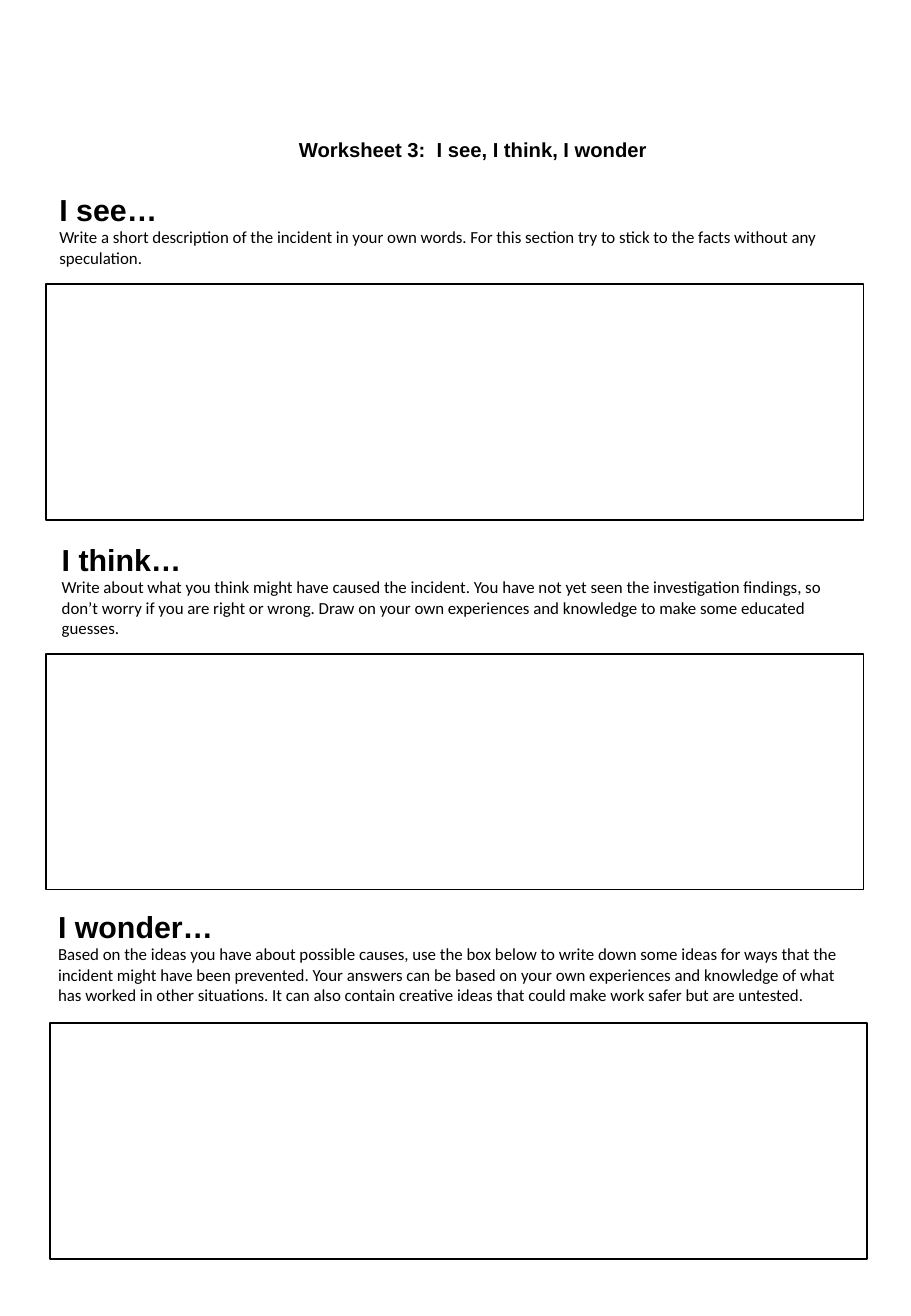
from pptx import Presentation
from pptx.dml.color import RGBColor
from pptx.enum.shapes import MSO_SHAPE
from pptx.enum.text import MSO_AUTO_SIZE, PP_ALIGN
from pptx.util import Inches, Pt

BLACK, WHITE = "000000", "FFFFFF"
WIDTH = 6.73
ANSWER_HEIGHT = 1.94

# heading, prompt, prompt (left, top, height), answer box (left, top)
SECTIONS = [
    ("I see…",
     "Write a short description of the incident in your own words. For this "
     "section try to stick to the facts without any speculation.",
     (0.39, 1.52, 0.74), (0.38, 2.34)),
    ("I think…",
     "Write about what you think might have caused the incident. You have not "
     "yet seen the investigation findings, so don’t worry if you are right or "
     "wrong. Draw on your own experiences and knowledge to make some educated "
     "guesses.",
     (0.41, 4.4, 0.91), (0.38, 5.38)),
    ("I wonder…",
     "Based on the ideas you have about possible causes, use the box below to "
     "write down some ideas for ways that the incident might have been "
     "prevented. Your answers can be based on your own experiences and "
     "knowledge of what has worked in other situations. It can also contain "
     "creative ideas that could make work safer but are untested.",
     (0.38, 7.42, 0.91), (0.41, 8.42)),
]


def rgb(color):
    return RGBColor.from_string(color)


def add_text_box(slide, left, top, height):
    """Add a wrapping text box of the common width and return its text frame."""
    sp = slide.shapes.add_textbox(
        Inches(left), Inches(top), Inches(WIDTH), Inches(height))
    tf = sp.text_frame
    tf.word_wrap = True
    tf.auto_size = MSO_AUTO_SIZE.SHAPE_TO_FIT_TEXT
    return tf


def write(p, text, font, size, bold=False):
    p.text = text
    p.font.name = font
    p.font.size = Pt(size)
    p.font.bold = bold
    p.font.color.rgb = rgb(BLACK)


def add_title(slide, text):
    p = add_text_box(slide, 0.53, 1.08, 0.3).paragraphs[0]
    write(p, text, "Arial", 12, bold=True)
    p.alignment = PP_ALIGN.CENTER


def add_prompt(slide, heading, prompt, left, top, height):
    tf = add_text_box(slide, left, top, height)
    write(tf.paragraphs[0], heading, "Arial", 18, bold=True)
    write(tf.add_paragraph(), prompt, "Calibri", 10)


def add_answer_box(slide, left, top):
    sp = slide.shapes.add_shape(
        MSO_SHAPE.RECTANGLE, Inches(left), Inches(top),
        Inches(WIDTH), Inches(ANSWER_HEIGHT))
    sp.shadow.inherit = False
    sp.fill.solid()
    sp.fill.fore_color.rgb = rgb(WHITE)
    sp.line.color.rgb = rgb(BLACK)
    sp.line.width = Pt(1)


def main():
    prs = Presentation()
    prs.slide_width, prs.slide_height = Inches(7.5), Inches(10.83)
    slide = prs.slides.add_slide(prs.slide_layouts[6])
    add_title(slide, "Worksheet 3:  I see, I think, I wonder")
    for heading, prompt, prompt_at, answer_at in SECTIONS:
        add_prompt(slide, heading, prompt, *prompt_at)
        add_answer_box(slide, *answer_at)
    prs.save("out.pptx")


if __name__ == "__main__":
    main()
